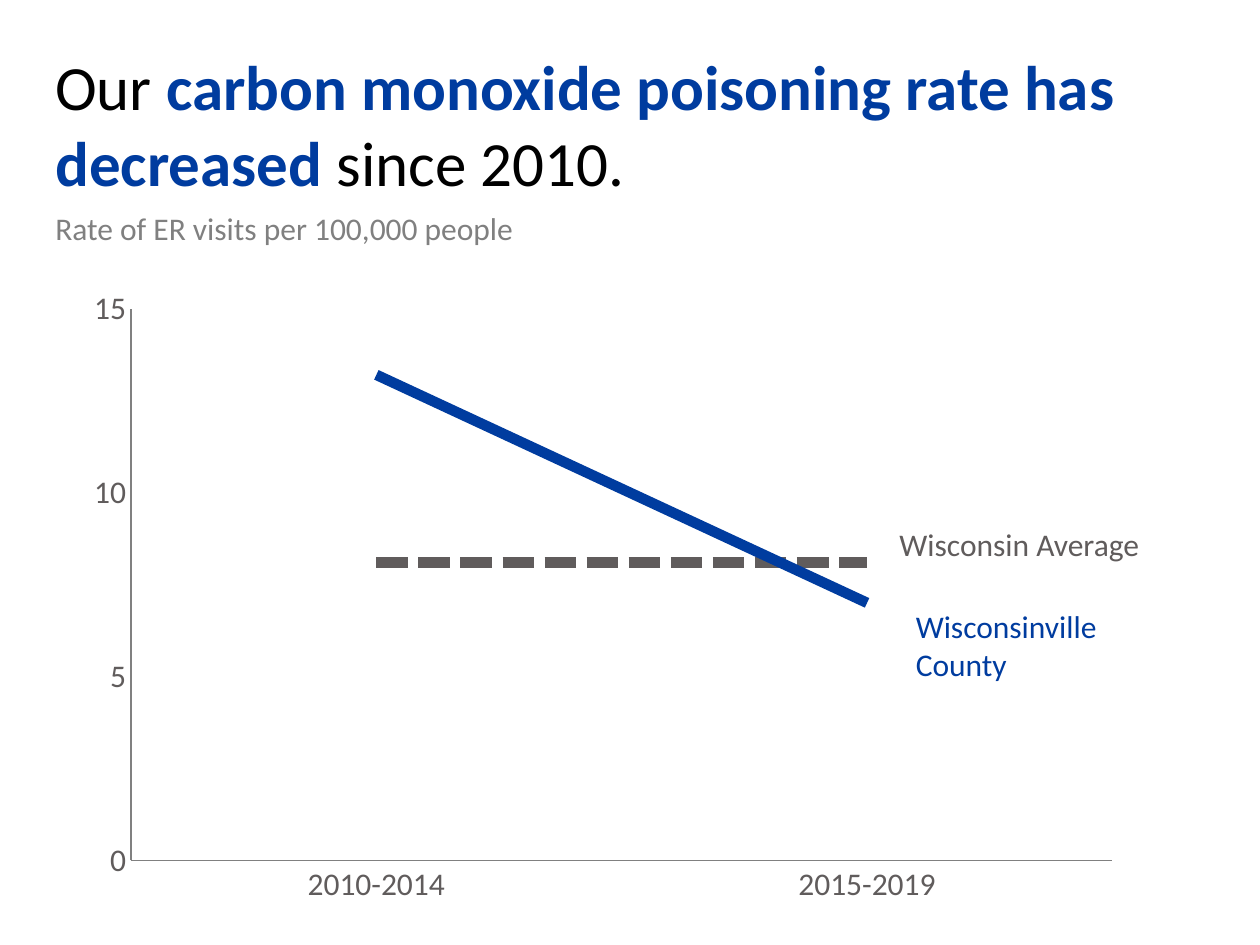
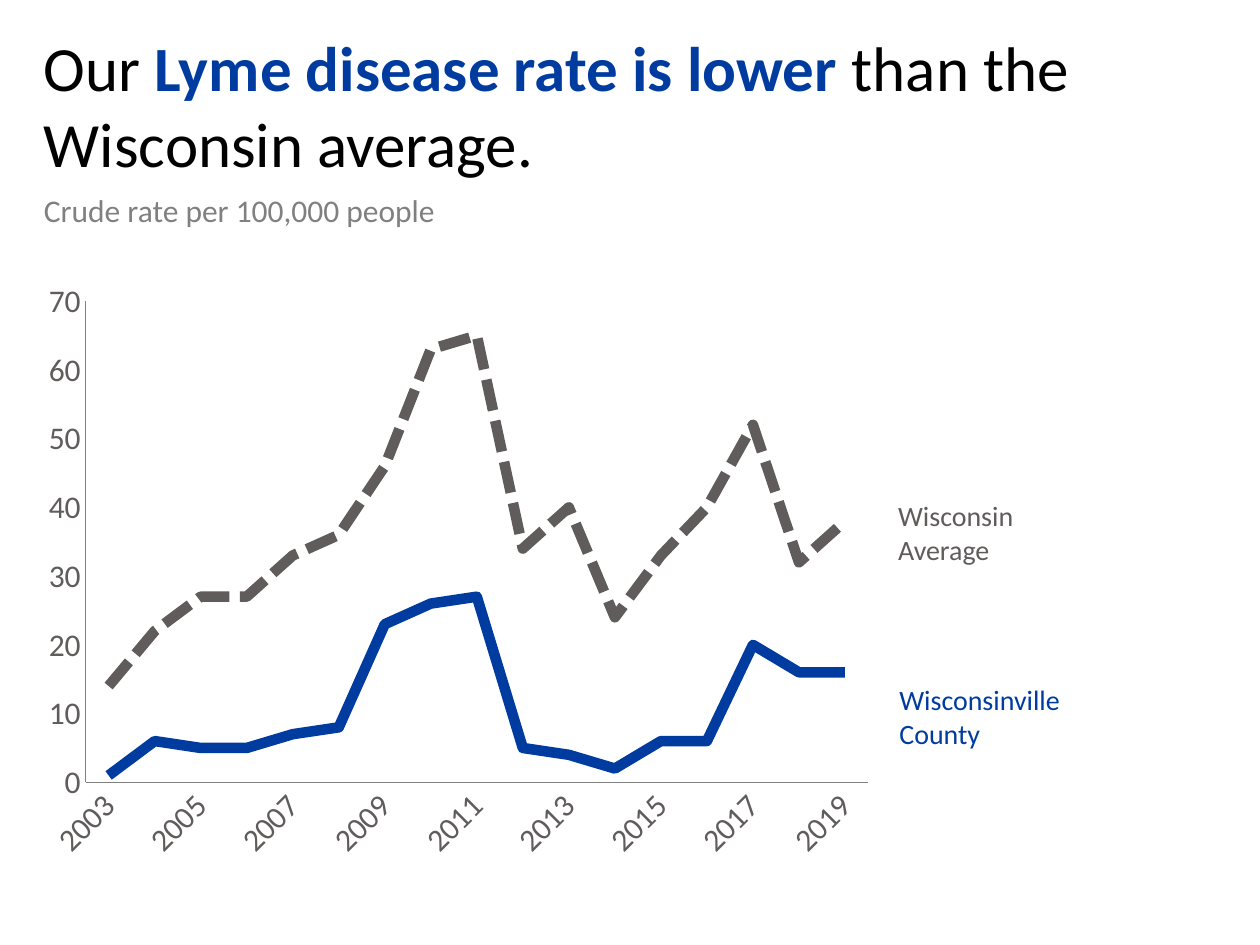
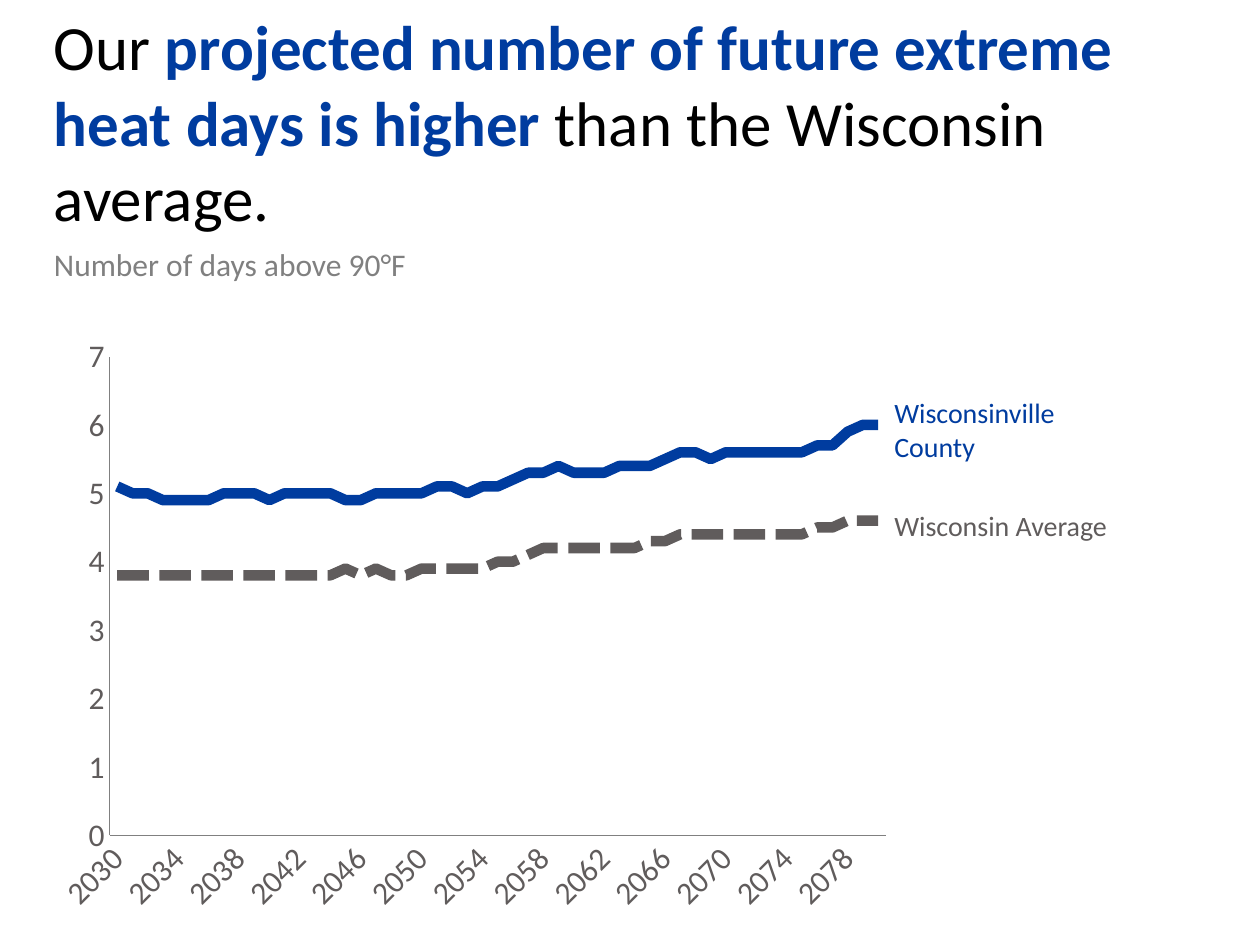
import dataclasses

import lxml.etree
import pptx
import pptx.chart.data
import pptx.dml.color
import pptx.enum.chart
import pptx.enum.dml
import pptx.oxml.ns
import pptx.util

Inches = pptx.util.Inches
Pt = pptx.util.Pt
qn = pptx.oxml.ns.qn


@dataclasses.dataclass(frozen=True)
class Theme:
    font: str = "Calibri"
    ink: str = "000000"
    blue: str = "003C9F"
    gray: str = "605C5C"
    pale: str = "808080"
    head: int = 36
    note: int = 18
    tick: int = 18
    base: int = 10
    gap: int = 6
    line: float = 6
    axis: float = 0.75


@dataclasses.dataclass(frozen=True)
class Box:
    left: float
    top: float
    width: float
    height: float

    def place(self):
        return [Inches(v) for v in dataclasses.astuple(self)]


THEME = Theme()


def color(code):
    return pptx.dml.color.RGBColor.from_string(code)


def style(font, size, code, bold=False):
    font.name = THEME.font
    font.size = Pt(size)
    font.bold = bold
    font.color.rgb = color(code)


def add_text(slide, box):
    frame = slide.shapes.add_textbox(*box.place()).text_frame
    frame.word_wrap = True
    return frame


def add_title(slide, box, parts, note):
    """Write the headline, its middle part stressed, above a small note."""
    frame = add_text(slide, box)
    head = frame.paragraphs[0]
    for part, strong in zip(parts, (False, True, False)):
        run = head.add_run()
        run.text = part
        style(run.font, THEME.head, THEME.blue if strong else THEME.ink, strong)
    unit = frame.add_paragraph()
    unit.text = note
    unit.space_before = Pt(THEME.gap)
    style(unit.runs[0].font, THEME.note, THEME.pale)


def add_label(slide, box, text, size, code):
    frame = add_text(slide, box)
    frame.text = text
    for run in frame.paragraphs[0].runs:
        style(run.font, size, code)


def set_plot(chart, box, plot):
    """Fix the inner plot area, given in slide inches, within the chart box."""
    area = chart.plots[0]._element.getparent()
    for old in area.findall(qn("c:layout")):
        area.remove(old)
    layout = lxml.etree.Element(qn("c:layout"))
    area.insert(0, layout)
    manual = lxml.etree.SubElement(layout, qn("c:manualLayout"))
    rules = {
        "layoutTarget": "inner",
        "xMode": "edge",
        "yMode": "edge",
        "x": (plot.left - box.left) / box.width,
        "y": (plot.top - box.top) / box.height,
        "w": plot.width / box.width,
        "h": plot.height / box.height,
    }
    for tag, value in rules.items():
        lxml.etree.SubElement(manual, qn("c:" + tag), val=str(value))


def set_axis(axis):
    axis.has_major_gridlines = False
    axis.major_tick_mark = pptx.enum.chart.XL_TICK_MARK.NONE
    axis.minor_tick_mark = pptx.enum.chart.XL_TICK_MARK.NONE
    style(axis.tick_labels.font, THEME.tick, THEME.gray)
    axis.format.line.color.rgb = color(THEME.pale)
    axis.format.line.width = Pt(THEME.axis)


def tilt_years(axis, skip):
    """Slant the category labels and show one in every skip."""
    node = axis._element
    node.find(qn("c:txPr")).find(qn("a:bodyPr")).set("rot", "-2700000")
    step = lxml.etree.Element(qn("c:tickLblSkip"), val=str(skip))
    node.find(qn("c:noMultiLvlLbl")).addprevious(step)


def add_trend(slide, box, plot, cats, state, county, top, step, skip=1):
    data = pptx.chart.data.CategoryChartData()
    data.categories = cats
    data.add_series("Series 1", state)
    data.add_series("Series 2", county)
    kind = pptx.enum.chart.XL_CHART_TYPE.LINE
    chart = slide.shapes.add_chart(kind, *box.place(), data).chart
    chart.has_legend = False
    chart.has_title = False
    style(chart.font, THEME.base, THEME.ink)
    set_plot(chart, box, plot)

    for axis in (chart.category_axis, chart.value_axis):
        set_axis(axis)
    scale = chart.value_axis
    scale.minimum_scale = 0
    scale.maximum_scale = top
    scale.major_unit = step
    scale.tick_labels.number_format = "0"
    scale.tick_labels.number_format_is_linked = False
    if skip > 1:
        tilt_years(chart.category_axis, skip)

    chart.plots[0].vary_by_categories = False
    for series, code in zip(chart.plots[0].series, (THEME.gray, THEME.blue)):
        series.smooth = False
        series.marker.style = pptx.enum.chart.XL_MARKER_STYLE.NONE
        series.format.line.color.rgb = color(code)
        series.format.line.width = Pt(THEME.line)
    chart.plots[0].series[0].format.line.dash_style = pptx.enum.dml.MSO_LINE.SQUARE_DOT


def years(first, last):
    return [str(year) for year in range(first, last + 1)]


SLIDES = [
    dict(
        title=(
            Box(0.34, 0.33, 9.25, 1.77),
            ("Our ", "carbon monoxide poisoning rate has decreased ", "since 2010."),
            "Rate of ER visits per 100,000 people",
        ),
        trend=dict(
            box=Box(0.58, 2.2, 8.42, 5.08),
            plot=Box(1.04, 2.45, 7.79, 4.38),
            cats=["2010-2014", "2015-2019"],
            state=[8.1, 8.1],
            county=[13.2, 7],
            top=15,
            step=5,
        ),
        labels=[
            (Box(7.04, 4.12, 2.25, 0.4), "Wisconsin Average", 18, THEME.gray),
            (Box(7.17, 4.77, 2, 0.71), "Wisconsinville County", 18, THEME.blue),
        ],
    ),
    dict(
        title=(
            Box(0.25, 0.18, 9.25, 2.91),
            ("Our ", "Lyme disease rate is lower ", "than the Wisconsin average."),
            "Crude rate per 100,000 people",
        ),
        trend=dict(
            box=Box(0.25, 2.14, 6.78, 4.77),
            plot=Box(0.68, 2.39, 6.21, 3.82),
            cats=years(2003, 2019),
            state=[14, 22, 27, 27, 33, 36, 46, 63, 65, 34, 40, 24, 33, 40, 52, 32, 38],
            county=[1, 6, 5, 5, 7, 8, 23, 26, 27, 5, 4, 2, 6, 6, 20, 16, 16],
            top=70,
            step=10,
            skip=2,
        ),
        labels=[
            (Box(7.03, 3.91, 2.08, 0.64), "Wisconsin \vAverage", 16, THEME.gray),
            (Box(7.04, 5.37, 1.92, 0.64), "Wisconsinville County", 16, THEME.blue),
        ],
    ),
    dict(
        title=(
            Box(0.33, 0.01, 9.25, 2.31),
            (
                "Our ",
                "projected number of future extreme heat days is higher ",
                "than the Wisconsin average.",
            ),
            "Number of days above 90°F",
        ),
        trend=dict(
            box=Box(0.33, 2.58, 6.83, 4.75),
            plot=Box(0.87, 2.83, 6.16, 3.8),
            cats=years(2030, 2080),
            state=[
                3.8, 3.8, 3.8, 3.8, 3.8, 3.8, 3.8, 3.8, 3.8, 3.8,
                3.8, 3.8, 3.8, 3.8, 3.8, 3.9, 3.8, 3.9, 3.8, 3.8,
                3.9, 3.9, 3.9, 3.9, 3.9, 4, 4, 4.1, 4.2, 4.2,
                4.2, 4.2, 4.2, 4.2, 4.2, 4.3, 4.3, 4.4, 4.4, 4.4,
                4.4, 4.4, 4.4, 4.4, 4.4, 4.4, 4.5, 4.5, 4.6, 4.6, 4.6,
            ],
            county=[
                5.1, 5, 5, 4.9, 4.9, 4.9, 4.9, 5, 5, 5,
                4.9, 5, 5, 5, 5, 4.9, 4.9, 5, 5, 5,
                5, 5.1, 5.1, 5, 5.1, 5.1, 5.2, 5.3, 5.3, 5.4,
                5.3, 5.3, 5.3, 5.4, 5.4, 5.4, 5.5, 5.6, 5.6, 5.5,
                5.6, 5.6, 5.6, 5.6, 5.6, 5.6, 5.7, 5.7, 5.9, 6, 6,
            ],
            top=7,
            step=1,
            skip=4,
        ),
        labels=[
            (Box(7, 3.99, 2.47, 0.37), "Wisconsin Average", 16, THEME.gray),
            (Box(7, 3.09, 2, 0.64), "Wisconsinville County", 16, THEME.blue),
        ],
    ),
]


def add_slide(deck, title, trend, labels):
    slide = deck.slides.add_slide(deck.slide_layouts[6])
    add_trend(slide, **trend)
    add_title(slide, *title)
    for label in labels:
        add_label(slide, *label)


def main():
    deck = pptx.Presentation()
    deck.slide_width = Inches(10)
    deck.slide_height = Inches(7.5)
    for parts in SLIDES:
        add_slide(deck, **parts)
    deck.save("out.pptx")


if __name__ == "__main__":
    main()
